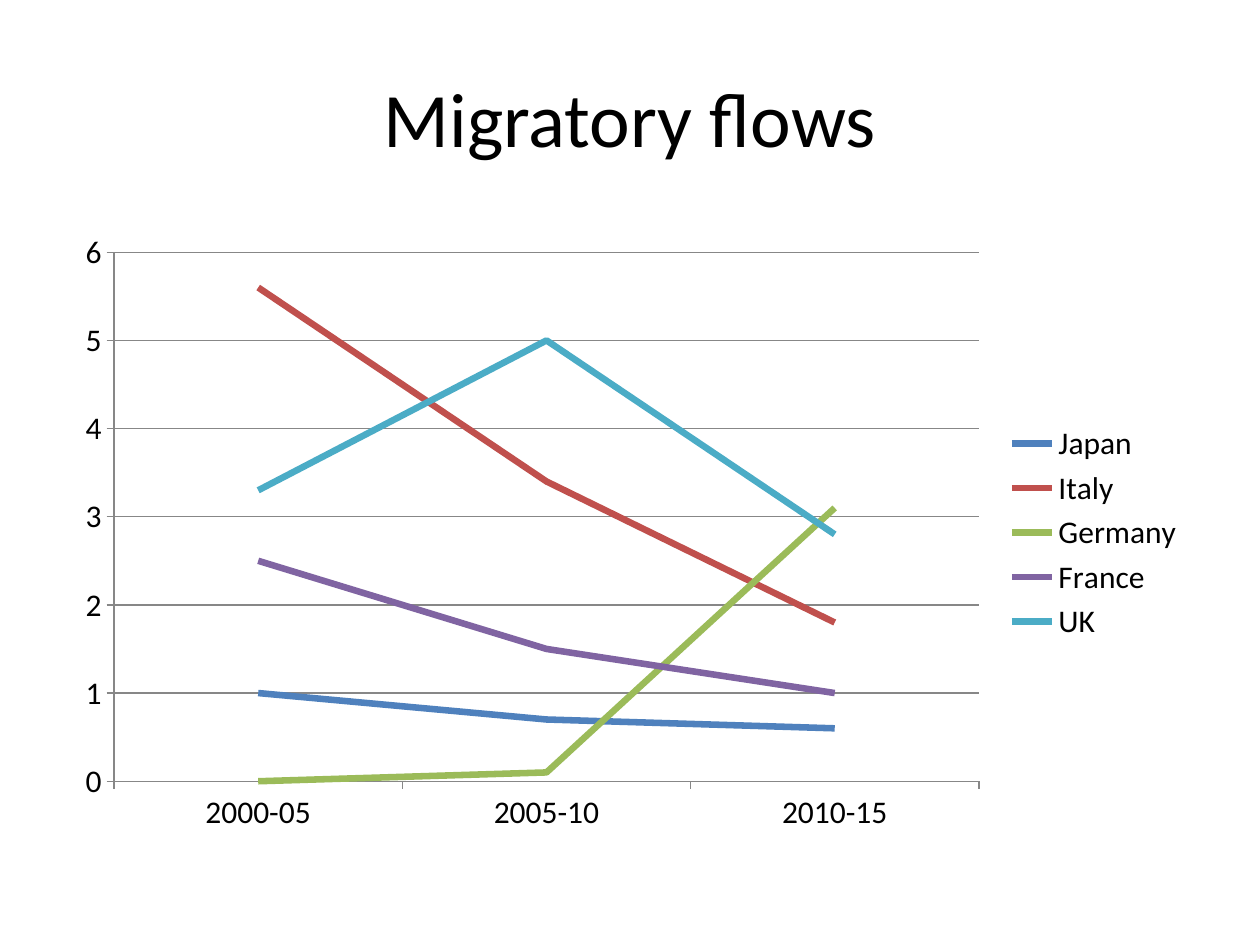
import dataclasses

import pptx
import pptx.chart.data
import pptx.dml.color
import pptx.enum.chart
import pptx.enum.text
import pptx.util
from pptx.util import Cm


@dataclasses.dataclass(frozen=True)
class Theme:
    """Colours, font and sizes of the slide."""
    font: str = "Calibri"
    text: str = "000000"
    axis: str = "878787"
    title_size: float = 44
    chart_size: float = 18
    axis_width: float = 0.75
    series_width: float = 3.75


THEME = Theme()
PERIODS = ["2000-05", "2005-10", "2010-15"]
FLOWS = {
    "Japan": ("4F81BD", (1, 0.7, 0.6)),
    "Italy": ("C0504D", (5.6, 3.4, 1.8)),
    "Germany": ("9BBB59", (0, 0.1, 3.1)),
    "France": ("8064A2", (2.5, 1.5, 1)),
    "UK": ("4BACC6", (3.3, 5, 2.8)),
}


def colour(code):
    """Return the colour object for a hex code."""
    return pptx.dml.color.RGBColor.from_string(code)


def format_font(font, size, code=THEME.text):
    """Set the typeface, size and colour of a font."""
    font.name = THEME.font
    font.size = pptx.util.Pt(size)
    font.color.rgb = colour(code)


def format_line(line, code, width):
    """Set the colour and width of a line."""
    line.color.rgb = colour(code)
    line.width = pptx.util.Pt(width)


def write_text(frame, text, size, align, anchor):
    """Write one formatted paragraph into a text frame."""
    frame.word_wrap = True
    frame.vertical_anchor = anchor
    para = frame.paragraphs[0]
    para.alignment = align
    span = para.add_run()
    span.text = text
    format_font(span.font, size)


def add_title(page, text, left, top, width, height):
    """Place the centred slide title in the given box."""
    box = page.shapes.add_textbox(left, top, width, height)
    write_text(box.text_frame, text, size=THEME.title_size,
               align=pptx.enum.text.PP_ALIGN.CENTER,
               anchor=pptx.enum.text.MSO_ANCHOR.MIDDLE)


def add_flow_chart(page, left, top, width, height):
    """Place the line chart of migratory flows in the given box."""
    data = pptx.chart.data.CategoryChartData()
    data.categories = PERIODS
    for country, (_, values) in FLOWS.items():
        data.add_series(country, values)
    chart = page.shapes.add_chart(pptx.enum.chart.XL_CHART_TYPE.LINE,
                                  left, top, width, height, data).chart
    format_font(chart.font, THEME.chart_size)
    chart.has_title = False
    chart.has_legend = True
    chart.legend.position = pptx.enum.chart.XL_LEGEND_POSITION.RIGHT
    chart.legend.include_in_layout = False
    chart.plots[0].vary_by_categories = False
    for series, (code, _) in zip(chart.plots[0].series, FLOWS.values()):
        series.smooth = False
        series.marker.style = pptx.enum.chart.XL_MARKER_STYLE.NONE
        format_line(series.format.line, code, THEME.series_width)
    for axis in (chart.category_axis, chart.value_axis):
        axis.major_tick_mark = pptx.enum.chart.XL_TICK_MARK.OUTSIDE
        axis.minor_tick_mark = pptx.enum.chart.XL_TICK_MARK.NONE
        format_line(axis.format.line, THEME.axis, THEME.axis_width)
    scale = chart.value_axis
    scale.minimum_scale, scale.maximum_scale, scale.major_unit = 0, 6, 1
    scale.has_major_gridlines = True
    format_line(scale.major_gridlines.format.line, THEME.axis, THEME.axis_width)


def main():
    """Build and save the deck."""
    deck = pptx.Presentation()
    deck.slide_width, deck.slide_height = Cm(25.4), Cm(19.05)
    page = deck.slides.add_slide(deck.slide_layouts[6])
    margin = Cm(1.27)
    width = deck.slide_width - 2 * margin
    add_title(page, "Migratory flows", margin, Cm(0.76), width, Cm(3.18))
    add_flow_chart(page, margin, Cm(4.45), width, Cm(12.57))
    deck.save("out.pptx")


if __name__ == "__main__":
    main()
